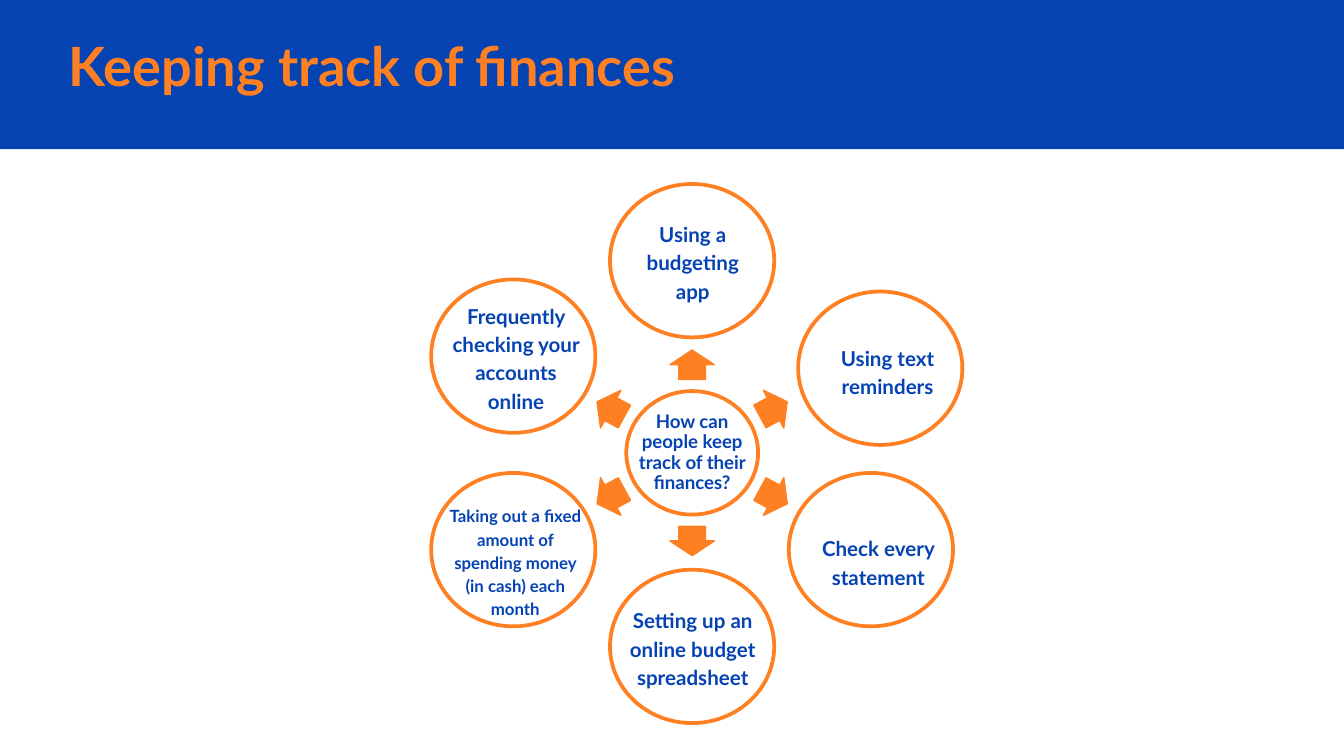
"""Build a slide with six ways of keeping track of finances around a question."""
from dataclasses import dataclass

from pptx import Presentation
from pptx.dml.color import RGBColor
from pptx.enum.shapes import MSO_SHAPE
from pptx.enum.text import MSO_ANCHOR, MSO_AUTO_SIZE, PP_ALIGN
from pptx.util import Pt

BLUE = "0543B3"
ORANGE = "FF8022"
HUB_X, HUB_Y = 370.8, 242.6
LABEL_INDENT = 7.9


@dataclass
class Idea:
    text: str
    x: float
    y: float
    label_dx: float
    label_dy: float
    label_width: float
    size: float = 11


@dataclass
class Arrow:
    dx: float
    dy: float
    angle: float
    length: float = 16.6
    breadth: float = 23


IDEAS = [
    Idea("Using a budgeting app", 370.8, 139.7, -3.6, 0, 74.9),
    Idea("Using text reminders", 471.6, 197.3, 0, 1.1, 61.9),
    Idea("Check every statement", 466.6, 294.5, 0, 6.1, 74.9),
    Idea("Setting up an online budget spreadsheet", 370.8, 346.3, -3.6, 0.4, 83.5),
    Idea("Taking out a fixed amount of spending money (in cash) each month",
         275, 294.5, -2.9, 6.1, 83.5, 9),
    Idea("Frequently checking your accounts online", 275, 190.8, -2.5, 0.2, 79.9),
]

ARROWS = [
    Arrow(0, -47.2, 270, 15.8, 23.8),
    Arrow(43.6, -23.4, 331.6),
    Arrow(43.6, 23.4, 28.4),
    Arrow(0, 47.2, 90, 15.8, 23.8),
    Arrow(-43.6, 23.4, 151.6),
    Arrow(-43.6, -23.4, 208.4),
]


def color(hex_value: str) -> RGBColor:
    """Turn a hex string into a colour."""
    return RGBColor.from_string(hex_value)


def box(x: float, y: float, width: float, height: float) -> tuple:
    """Return left, top, width and height of a box centred on a point."""
    return Pt(x - width / 2), Pt(y - height / 2), Pt(width), Pt(height)


def write(shape, text: str, *, size: float, ink: str, align=PP_ALIGN.CENTER,
          spacing: float = 1.0, inset: float = 0.7, indent: float = 0) -> None:
    """Fill a shape with one formatted bold paragraph."""
    frame = shape.text_frame
    frame.auto_size = MSO_AUTO_SIZE.NONE
    frame.word_wrap = True
    frame.vertical_anchor = MSO_ANCHOR.MIDDLE
    frame.margin_left = frame.margin_right = Pt(inset)
    frame.margin_top = frame.margin_bottom = Pt(inset)
    paragraph = frame.paragraphs[0]
    paragraph.alignment = align
    paragraph.line_spacing = spacing
    if indent:
        properties = paragraph._p.get_or_add_pPr()
        properties.set("marL", str(Pt(indent)))
        properties.set("indent", "0")
    run = paragraph.add_run()
    run.text = text
    run.font.name = "Lato"
    run.font.size = Pt(size)
    run.font.bold = True
    run.font.color.rgb = color(ink)


def draw_shape(slide, kind, bounds: tuple, *, fill: str = "", line: str = "",
               weight: float = 0):
    """Add a preset shape with an optional fill and outline."""
    shape = slide.shapes.add_shape(kind, *bounds)
    shape.shadow.inherit = False
    if fill:
        shape.fill.solid()
        shape.fill.fore_color.rgb = color(fill)
    else:
        shape.fill.background()
    if line:
        shape.line.color.rgb = color(line)
        shape.line.width = Pt(weight)
    else:
        shape.line.fill.background()
    return shape


def draw_header(slide, text: str) -> None:
    """Place the title on a full-width band."""
    title = slide.shapes.title
    band = draw_shape(slide, MSO_SHAPE.RECTANGLE, (0, 0, Pt(720), Pt(80)), fill=BLUE)
    title._element.addprevious(band._element)
    title.left, title.top, title.width, title.height = Pt(29.5), Pt(14.4), Pt(609), Pt(40.3)
    write(title, text, size=29, ink=ORANGE, align=PP_ALIGN.LEFT, inset=7.2)


def draw_hub(slide, text: str) -> None:
    """Draw the central question."""
    draw_shape(slide, MSO_SHAPE.OVAL, box(HUB_X, HUB_Y, 70.6, 66.2), line=ORANGE, weight=2)
    label = slide.shapes.add_textbox(*box(HUB_X, HUB_Y, 61.9, 46.8))
    write(label, text, size=10, ink=BLUE, spacing=0.9)


def draw_arrow(slide, arrow: Arrow) -> None:
    """Draw an arrow pointing away from the hub."""
    bounds = box(HUB_X + arrow.dx, HUB_Y + arrow.dy, arrow.length, arrow.breadth)
    shape = draw_shape(slide, MSO_SHAPE.RIGHT_ARROW, bounds,
                       fill=ORANGE, line=ORANGE, weight=0.75)
    shape.adjustments[0] = 0.6
    shape.adjustments[1] = 0.5
    shape.rotation = arrow.angle


def draw_idea(slide, idea: Idea) -> None:
    """Draw an idea as a ring with its label."""
    draw_shape(slide, MSO_SHAPE.OVAL, box(idea.x, idea.y, 88, 82.2), line=ORANGE, weight=2)
    label = slide.shapes.add_textbox(
        *box(idea.x + idea.label_dx, idea.y + idea.label_dy, idea.label_width, 58.3))
    write(label, idea.text, size=idea.size, ink=BLUE, spacing=1.15, indent=LABEL_INDENT)


def main() -> None:
    """Build and save the presentation."""
    presentation = Presentation()
    presentation.slide_width, presentation.slide_height = Pt(720), Pt(405)
    slide = presentation.slides.add_slide(presentation.slide_layouts[5])
    draw_header(slide, "Keeping track of finances")
    draw_hub(slide, "How can people keep track of their finances?")
    for arrow in ARROWS:
        draw_arrow(slide, arrow)
    for idea in IDEAS:
        draw_idea(slide, idea)
    presentation.save("out.pptx")


if __name__ == "__main__":
    main()
